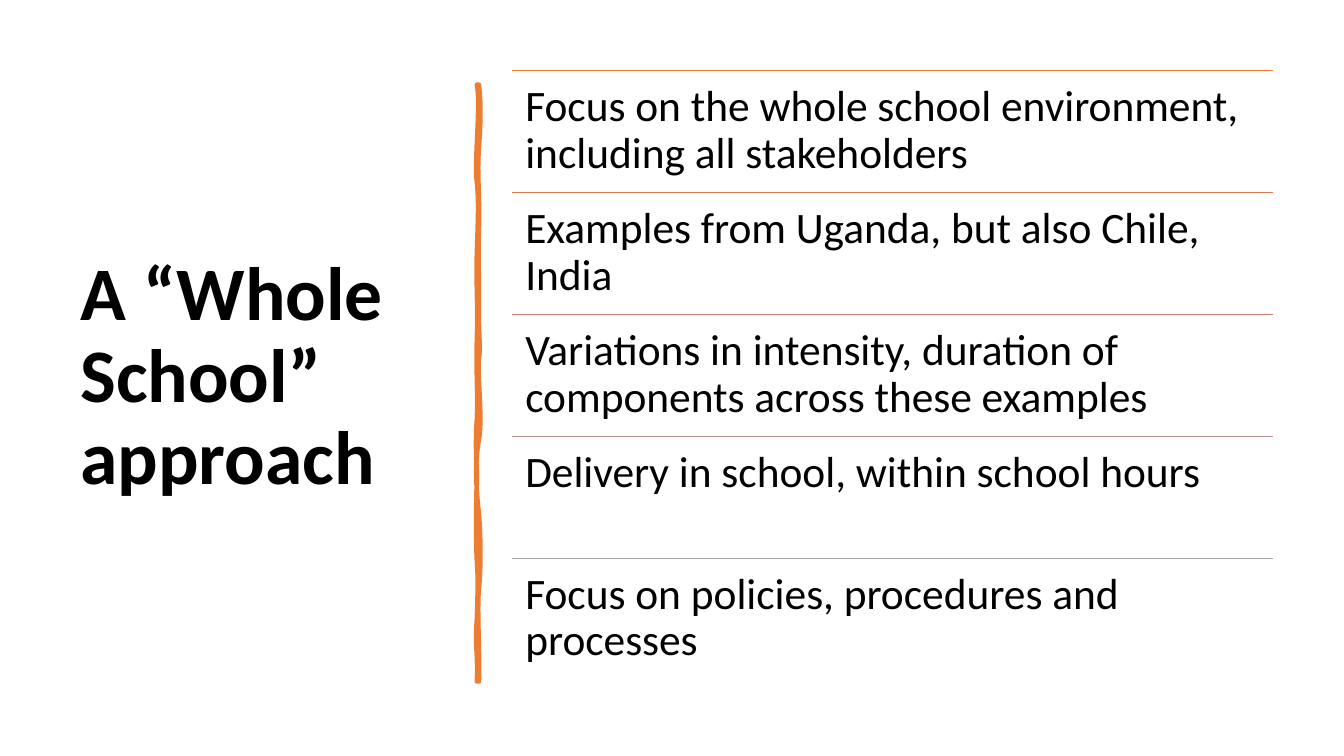
from lxml import etree
from pptx import Presentation
from pptx.dml.color import RGBColor
from pptx.enum.shapes import MSO_CONNECTOR
from pptx.enum.text import MSO_ANCHOR
from pptx.oxml.ns import qn
from pptx.util import Inches, Pt

STRAIGHT = MSO_CONNECTOR.STRAIGHT
TOP, MIDDLE = MSO_ANCHOR.TOP, MSO_ANCHOR.MIDDLE

# Content
TITLE = "A “Whole School” approach"
POINTS = [
    ("Focus on the whole school environment, including all stakeholders", "ED7D31"),
    ("Examples from Uganda, but also Chile, India", "D87A51"),
    ("Variations in intensity, duration of components across these examples", "C48170"),
    ("Delivery in school, within school hours", "B4908B"),
    ("Focus on policies, procedures and processes", "A5A5A5"),
]
TITLE_FORMAT = {"name": "Calibri", "size": Pt(54), "bold": True}
POINT_FORMAT = {"name": "Calibri", "size": Pt(31), "bold": False}

# Hand-drawn bar: cubic curves down the right edge and up the left edge
BAR_COLOR = "ED7D31"
BAR_LEFT, BAR_TOP, BAR_RIGHT, BAR_BOTTOM = 4.73, 0.84, 4.75, 6.76
BAR_END = (4.74, 6.76, 4.73, 6.76, 4.73, 6.76)
BAR_CLOSE = (4.74, 0.84, 4.74, 0.84, 4.75, 0.84)
STROKE_CURVES = [
    (4.77, 1.02, 4.77, 1.19, 4.75, 1.46), (4.73, 1.73, 4.76, 1.95, 4.75, 2.26),
    (4.74, 2.57, 4.75, 2.62, 4.75, 2.94), (4.74, 3.25, 4.77, 3.42, 4.75, 3.56),
    (4.73, 3.7, 4.79, 4.14, 4.75, 4.36), (4.71, 4.57, 4.72, 4.84, 4.75, 5.1),
    (4.77, 5.36, 4.77, 5.64, 4.75, 5.84), (4.73, 6.03, 4.76, 6.5, 4.75, 6.76),
    BAR_END,
    (4.74, 6.46, 4.71, 6.44, 4.73, 6.13), (4.74, 5.83, 4.74, 5.7, 4.73, 5.57),
    (4.72, 5.44, 4.72, 4.95, 4.73, 4.77), (4.73, 4.59, 4.71, 4.45, 4.73, 4.15),
    (4.74, 3.86, 4.72, 3.73, 4.73, 3.35), (4.74, 2.98, 4.72, 2.81, 4.73, 2.5),
    (4.74, 2.18, 4.75, 2, 4.73, 1.81), (4.7, 1.63, 4.77, 1.04, 4.73, 0.84),
    BAR_CLOSE,
]
FILL_CURVES = [
    (4.75, 1.15, 4.72, 1.25, 4.75, 1.52), (4.77, 1.79, 4.74, 1.97, 4.75, 2.08),
    (4.76, 2.2, 4.74, 2.55, 4.75, 2.94), (4.76, 3.33, 4.73, 3.43, 4.75, 3.62),
    (4.77, 3.81, 4.77, 3.97, 4.75, 4.3), (4.72, 4.63, 4.75, 4.74, 4.75, 5.16),
    (4.75, 5.57, 4.74, 5.53, 4.75, 5.78), (4.76, 6.03, 4.74, 6.47, 4.75, 6.76),
    BAR_END,
    (4.7, 6.49, 4.74, 6.32, 4.73, 6.13), (4.72, 5.95, 4.75, 5.69, 4.73, 5.39),
    (4.71, 5.1, 4.76, 5, 4.73, 4.71), (4.7, 4.42, 4.77, 4.2, 4.73, 3.86),
    (4.69, 3.51, 4.74, 3.25, 4.73, 3), (4.71, 2.75, 4.71, 2.59, 4.73, 2.38),
    (4.74, 2.16, 4.74, 1.85, 4.73, 1.64), (4.71, 1.43, 4.75, 1.21, 4.73, 0.84),
    BAR_CLOSE,
]

# Layout of the list
LIST_LEFT, LIST_TOP, LIST_WIDTH, ROW_HEIGHT = 5.08, 0.7, 7.55, 1.21


def color(hex_string):
    return RGBColor.from_string(hex_string)


def add_text(slide, text, box, text_format, anchor, margins):
    shape = slide.shapes.add_textbox(*map(Inches, box))
    frame = shape.text_frame
    frame.word_wrap = True
    frame.vertical_anchor = anchor
    horizontal, vertical = map(Inches, margins)
    frame.margin_left = frame.margin_right = horizontal
    frame.margin_top = frame.margin_bottom = vertical
    paragraph = frame.paragraphs[0]
    paragraph.line_spacing = 0.9
    run = paragraph.add_run()
    run.text = text
    for attribute, value in text_format.items():
        setattr(run.font, attribute, value)
    run.font.color.rgb = color("000000")


def add_rule(slide, top, line_color):
    left, right, y = Inches(LIST_LEFT), Inches(LIST_LEFT + LIST_WIDTH), Inches(top)
    connector = slide.shapes.add_connector(STRAIGHT, left, y, right, y)
    connector.line.color.rgb = color(line_color)
    connector.line.width = Pt(1)
    etree.SubElement(connector._element.spPr, qn("a:effectLst"))


def add_curves(outlines, size, curves, option):
    """Add one closed outline, laid on its side within the turned frame."""
    width, height = size
    outline = etree.SubElement(outlines, qn("a:path"), w=str(width), h=str(height), **option)

    def add_step(tag, values):
        step = etree.SubElement(outline, qn(tag))
        for x, y in zip(values[::2], values[1::2]):
            etree.SubElement(step, qn("a:pt"), x=str(Inches(y - BAR_TOP)),
                             y=str(Inches(BAR_RIGHT - x)))

    add_step("a:moveTo", (BAR_RIGHT, BAR_TOP))
    for curve in curves:
        add_step("a:cubicBezTo", curve)
    etree.SubElement(outline, qn("a:close"))


def add_bar(slide):
    # Horizontal frame around the bar's centre, then a quarter turn
    width, height = Inches(BAR_BOTTOM - BAR_TOP), Inches(BAR_RIGHT - BAR_LEFT)
    left = Inches((BAR_LEFT + BAR_RIGHT) / 2) - width // 2
    top = Inches((BAR_TOP + BAR_BOTTOM) / 2) - height // 2
    builder = slide.shapes.build_freeform(left, top)
    builder.add_line_segments([(left + width, top), (left + width, top + height),
                               (left, top + height)])
    shape = builder.convert_to_shape()
    shape.rotation = 90

    # Curved outlines: one for the line, one for the fill
    outlines = shape._element.spPr.find(".//" + qn("a:pathLst"))
    outlines.remove(outlines[0])
    add_curves(outlines, (width, height), STROKE_CURVES, {"fill": "none"})
    add_curves(outlines, (width, height), FILL_CURVES, {"stroke": "0"})

    shape.shadow.inherit = False
    shape.fill.solid()
    shape.fill.fore_color.rgb = color(BAR_COLOR)
    shape.line.color.rgb = color(BAR_COLOR)
    shape.line.width = Pt(3.25)
    etree.SubElement(shape.line._get_or_add_ln(), qn("a:round"))


def main():
    presentation = Presentation()
    presentation.slide_width = Inches(13.33)
    presentation.slide_height = Inches(7.5)
    slide = presentation.slides.add_slide(presentation.slide_layouts[6])

    # Title and bar
    add_text(slide, TITLE, (0.7, 0.7, 3.74, 6.1), TITLE_FORMAT, MIDDLE, (0.1, 0.05))
    add_bar(slide)

    # Ruled list
    for index, (text, line_color) in enumerate(POINTS):
        top = LIST_TOP + index * ROW_HEIGHT
        add_rule(slide, top, line_color)
        add_text(slide, text, (LIST_LEFT, top, LIST_WIDTH, ROW_HEIGHT),
                 POINT_FORMAT, TOP, (0.13, 0.13))

    presentation.save("out.pptx")


if __name__ == "__main__":
    main()
